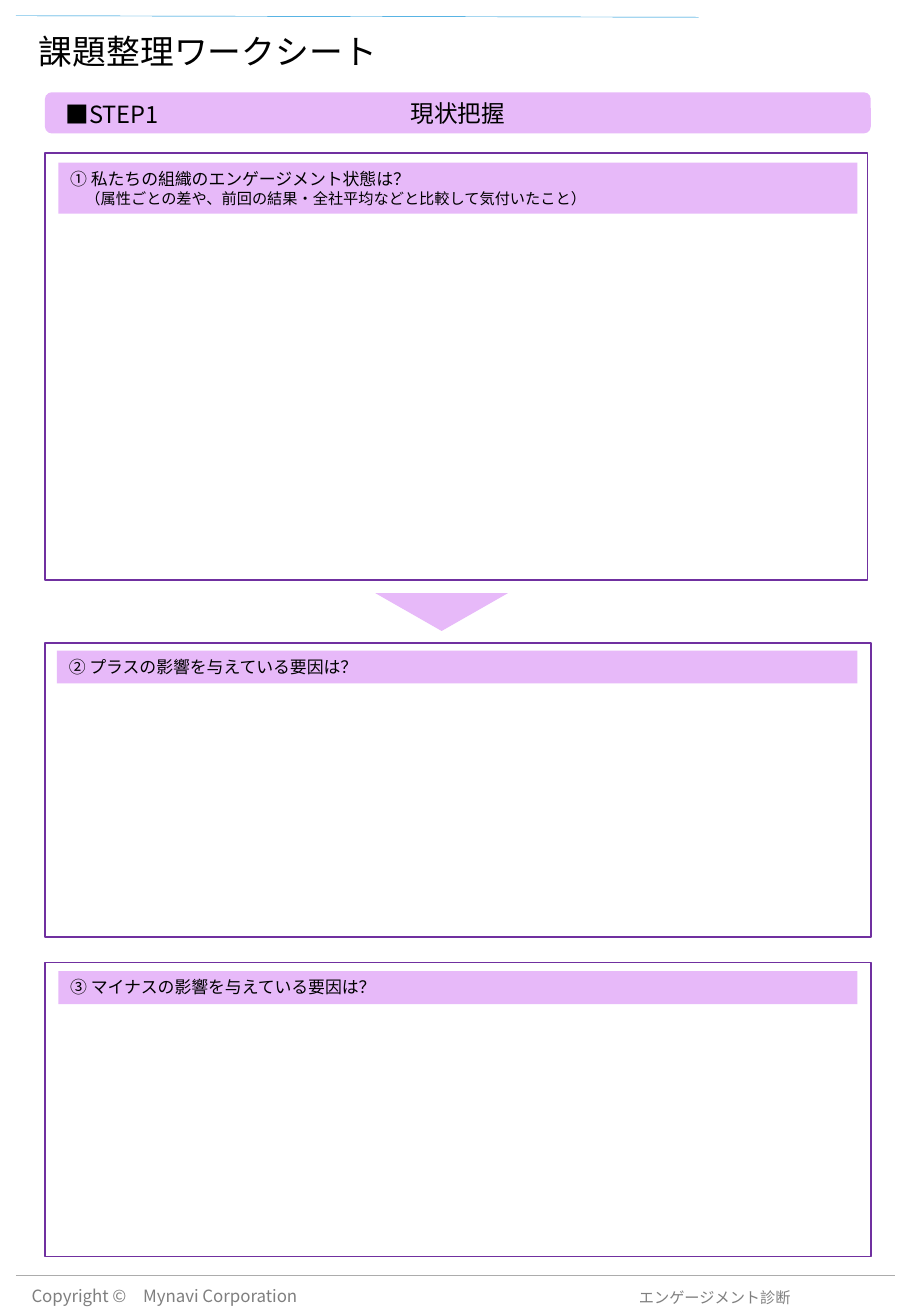
from lxml import etree
from pptx import Presentation
from pptx.dml.color import RGBColor
from pptx.enum.shapes import MSO_CONNECTOR, MSO_SHAPE
from pptx.enum.text import MSO_ANCHOR, MSO_AUTO_SIZE, PP_ALIGN
from pptx.oxml.ns import qn
from pptx.util import Cm, Pt

LEFT, CENTER, RIGHT = PP_ALIGN.LEFT, PP_ALIGN.CENTER, PP_ALIGN.RIGHT
TOP, MIDDLE = MSO_ANCHOR.TOP, MSO_ANCHOR.MIDDLE
RECT, ROUND = MSO_SHAPE.RECTANGLE, MSO_SHAPE.ROUNDED_RECTANGLE
TRIANGLE = MSO_SHAPE.ISOSCELES_TRIANGLE
STRAIGHT = MSO_CONNECTOR.STRAIGHT
NO_FIT = MSO_AUTO_SIZE.NONE

FONT = "Noto Sans CJK JP"
COLORS = {
    "ink": "000000",
    "lilac": "E7B9F9",
    "purple": "7030A0",
    "gray": "7F7F7F",
    "rule": "ACACAC",
    "blue": "008CD6",
}
EDGE, WIDTH = 0.94, 17.27
PANELS = [
    ((EDGE, 3.2, 17.2, 8.92), (0.28, 0.2, 16.71, 1.07), [
        ("① 私たちの組織のエンゲージメント状態は？", 10, 0),
        ("（属性ごとの差や、前回の結果・全社平均などと比較して気付いたこと）", 9, 9),
    ]),
    ((EDGE, 13.44, WIDTH, 6.15), (0.25, 0.16, 16.74, 0.69), [
        ("② プラスの影響を与えている要因は？", 10, 0),
    ]),
    ((EDGE, 20.12, WIDTH, 6.15), (0.28, 0.18, 16.71, 0.69), [
        ("③ マイナスの影響を与えている要因は？", 10, 0),
    ]),
]


def paint(color):
    """Return the named colour."""
    return RGBColor.from_string(COLORS[color])


def write(shape, lines, color="ink", align=LEFT, anchor=TOP, space=1.0):
    """Fill a shape with lines of (text, size, indent)."""
    frame = shape.text_frame
    frame.word_wrap = True
    frame.auto_size = NO_FIT
    frame.vertical_anchor = anchor
    for i, (text, size, indent) in enumerate(lines):
        para = frame.add_paragraph() if i else frame.paragraphs[0]
        para.alignment = align
        para.line_spacing = space
        para.space_before = Pt(0)
        if indent:
            para._p.get_or_add_pPr().set("marL", str(Pt(indent)))
        run = para.add_run()
        run.text = text
        run.font.size = Pt(size)
        run.font.name = FONT
        run.font.color.rgb = paint(color)
        east = etree.SubElement(run._r.get_or_add_rPr(), qn("a:ea"))
        east.set("typeface", FONT)


def add_form(slide, kind, box, fill=None, line=None):
    """Add a plain preset shape."""
    form = slide.shapes.add_shape(kind, *map(Cm, box))
    form.shadow.inherit = False
    if fill:
        form.fill.solid()
        form.fill.fore_color.rgb = paint(fill)
    else:
        form.fill.background()
    if line:
        form.line.color.rgb = paint(line)
        form.line.width = Pt(1)
    else:
        form.line.fill.background()
    return form


def add_text(slide, box, text, size, **style):
    """Add a one-line text box."""
    label = slide.shapes.add_textbox(*map(Cm, box))
    write(label, [(text, size, 0)], **style)
    return label


def add_rule(slide, ends, color, width):
    """Add a thin line between two points."""
    rule = slide.shapes.add_connector(STRAIGHT, *map(Cm, ends))
    rule.line.color.rgb = paint(color)
    rule.line.width = Pt(width)
    etree.SubElement(rule._element.spPr, qn("a:effectLst"))


def add_head(slide, box):
    """Place the top rule and the title."""
    x, y, w, h = box
    add_rule(slide, (x - 0.23, y - 0.1, x + 14.05, y - 0.07), "blue", 0.25)
    title = slide.shapes.title
    title.left, title.top, title.width, title.height = map(Cm, box)
    write(title, [("課題整理ワークシート", 20, 0)], anchor=MIDDLE, space=0.9)


def add_step(slide, box):
    """Place the step banner."""
    x, y, w, h = box
    bar = add_form(slide, ROUND, box, "lilac")
    write(bar, [("現状把握", 14, 0)], align=CENTER, anchor=MIDDLE)
    add_text(slide, (x + 0.18, y + 0.03, 11.94, h), "■STEP1", 14)


def add_panel(slide, box, bar, lines):
    """Place an answer frame with its question bar."""
    x, y, w, h = box
    dx, dy, wide, high = bar
    ask = add_form(slide, RECT, (x + dx, y + dy, wide, high), "lilac")
    write(ask, lines)
    add_form(slide, RECT, box, line="purple")


def add_foot(slide, box):
    """Place the bottom rule, copyright and product line."""
    x, y, w, h = box
    add_rule(slide, (x, y, x + w, y), "rule", 0.75)
    add_text(slide, (x + 0.08, y + 0.2, 6.5, 0.51),
             "Copyright ©\u3000Mynavi Corporation".replace("\u3000", "　"), 10,
             color="gray", anchor=MIDDLE, space=0.9)
    name = add_text(slide, (x + 8.76, y + 0.23, 7.44, 0.58),
                    "エンゲージメント診断", 9, color="gray", align=RIGHT)
    frame = name.text_frame
    frame.margin_left = frame.margin_right = frame.margin_bottom = 0
    frame.margin_top = Cm(0.03)


def main():
    """Build the worksheet."""
    deck = Presentation()
    deck.slide_width, deck.slide_height = Cm(19.05), Cm(27.51)
    slide = deck.slides.add_slide(deck.slide_layouts[5])
    add_foot(slide, (0.33, 26.67, 18.39, 0.84))
    add_head(slide, (0.56, 0.43, 17.91, 1.37))
    add_step(slide, (EDGE, 1.93, WIDTH, 0.86))
    for box, bar, lines in PANELS:
        add_panel(slide, box, bar, lines)
    arrow = add_form(slide, TRIANGLE, (7.85, 12.4, 2.77, 0.79), "lilac")
    arrow.rotation = 180
    deck.save("out.pptx")


if __name__ == "__main__":
    main()
